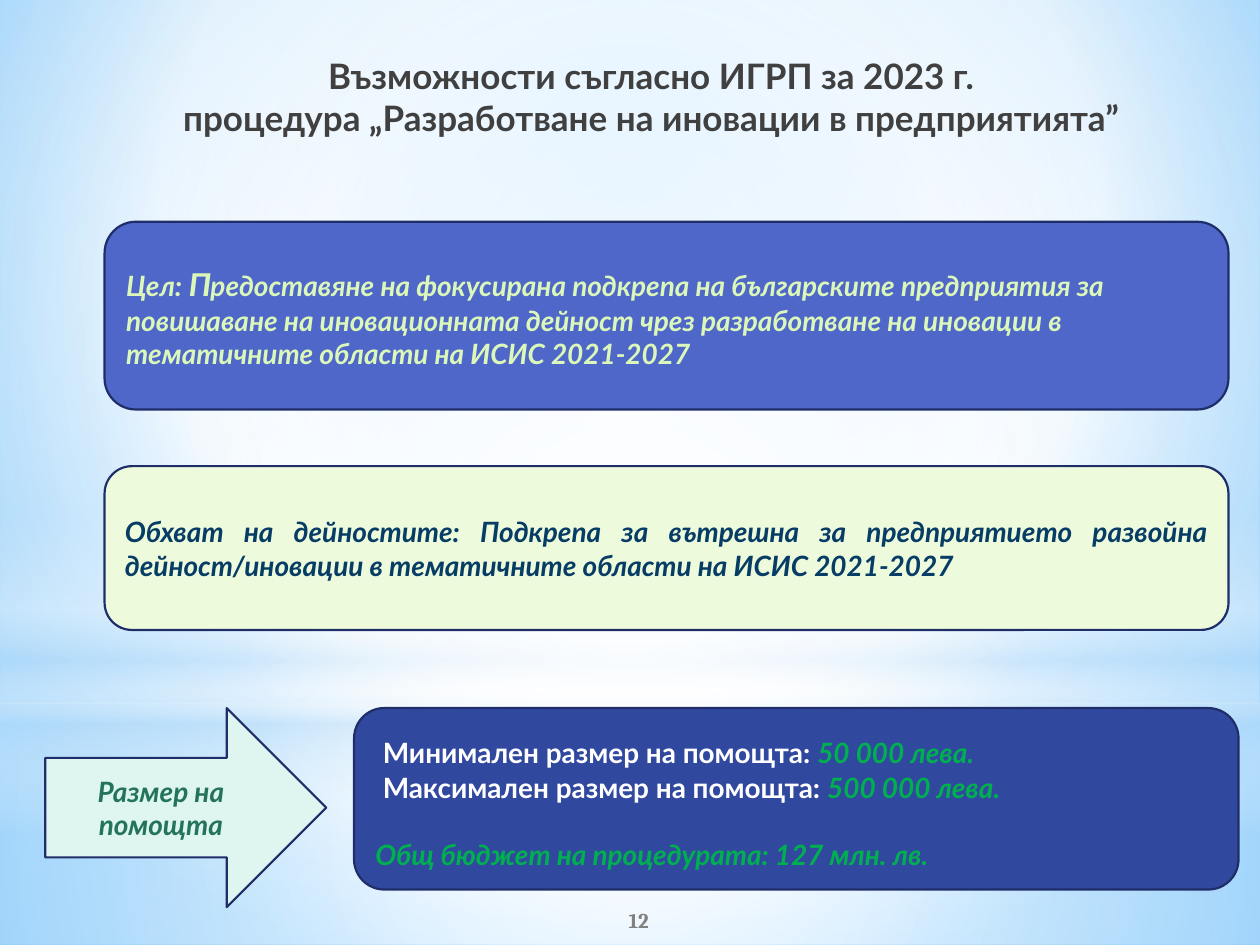
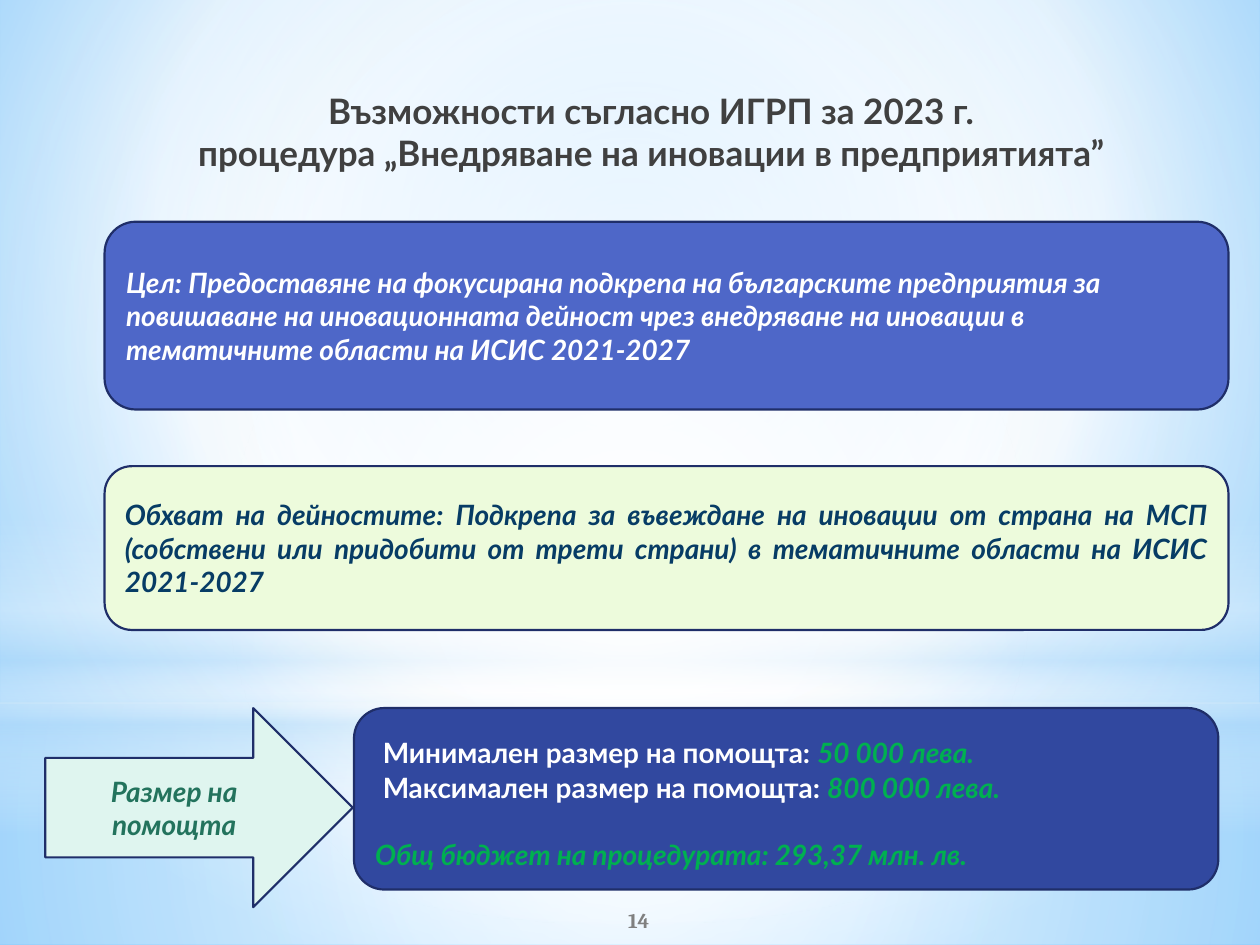
from lxml import etree
from pptx import Presentation
from pptx.dml.color import RGBColor
from pptx.enum import shapes, text
from pptx.oxml import ns
from pptx.util import Inches, Pt

# Content
SLIDES = [
    {
        "title": ["Възможности съгласно ИГРП за 2023 г.",
                  "процедура „Разработване на иновации в предприятията”"],
        "title_top": 0.38,
        "goal_color": "lime",
        "goal": [("Цел: ", 16, "Lato"), ("П", 20, "Calibri"),
                 ("редоставяне на фокусирана подкрепа на българските предприятия за "
                  "повишаване на иновационната дейност чрез разработване на иновации в "
                  "тематичните области на ИСИС 2021-2027", 16, "Lato")],
        "scope": "Обхват на дейностите: Подкрепа за вътрешна за предприятието развойна "
                 "дейност/иновации в тематичните области на ИСИС 2021-2027",
        "limits": [("Минимален размер на помощта: ", "50 000 лева."),
                   ("Максимален размер на помощта: ", "500 000 лева.")],
        "budget": "Общ бюджет на процедурата: 127 млн. лв.",
        "arrow_width": 2.23, "aid_width": 7.02, "number": "12",
    },
    {
        "title": ["Възможности съгласно ИГРП за 2023 г.",
                  "процедура „Внедряване на иновации в предприятията”"],
        "title_top": 0.66,
        "goal_color": "white",
        "goal": [("Цел: Предоставяне на фокусирана подкрепа на българските предприятия за "
                  "повишаване на иновационната дейност чрез внедряване на иновации в "
                  "тематичните области на ИСИС 2021-2027", 16, "Lato")],
        "scope": "Обхват на дейностите: Подкрепа за въвеждане на иновации от страна на МСП "
                 "(собствени или придобити от трети страни) в тематичните области на ИСИС "
                 "2021-2027",
        "limits": [("Минимален размер на помощта: ", "50 000 лева."),
                   ("Максимален размер на помощта: ", "800 000 лева.")],
        "budget": "Общ бюджет на процедурата: 293,37 млн. лв.",
        "arrow_width": 2.44, "aid_width": 6.86, "number": "14",
    },
]
ARROW_LABEL = "Размер на помощта"

# Shared style
COLORS = {
    "title": "404040", "goal": "4E67C8", "scope": "EDFBDC", "arrow": "DFF5EF",
    "aid": "31489F", "outline": "1F2E69", "lime": "DCF7BA", "white": "FFFFFF",
    "navy": "073C65", "teal": "23735D", "green": "00B050", "number": "808080",
    "sky": "B4DCFA", "sky_left": "9ED5FF", "sky_edge": "5BB9FF",
}
SHAPE = shapes.MSO_SHAPE
ALIGN = text.PP_ALIGN
CENTER = (50, 50, 50, 50)

# Gradients: stops of (position, colour, opacity), focus of a circle or None for vertical
PAGE = ([(0, "sky_left", 100), (60, "white", 100), (100, "sky_edge", 100)], (20, 10, 20, 60))
BACKDROP = [
    (SHAPE.RECTANGLE, 5.58, 1.92,
     [(0, "white", 91), (37, "white", 76), (100, "sky", 79)], CENTER),
    (SHAPE.RECTANGLE, 0, 5.58,
     [(0, "white", 89), (48, "white", 62), (100, "sky", 79)], CENTER),
    (SHAPE.RECTANGLE, 4.12, 2.5,
     [(0, "white", 0), (29, "white", 30), (45, "sky", 40), (55, "white", 26),
      (65, "sky", 60), (100, "white", 0)], None),
    (SHAPE.OVAL, 1.75, 5.58, [(0, "white", 100), (56, "white", 0)], CENTER),
]


def rgb(name):
    return RGBColor.from_string(COLORS[name])


def set_gradient(fill, element, stops, focus):
    """Give the first gradient fill under element the stops and direction."""
    fill.gradient()
    grad = element.find(".//" + ns.qn("a:gradFill"))
    for child in list(grad):
        grad.remove(child)

    def add(parent, tag, **attrs):
        return etree.SubElement(parent, ns.qn(tag), {k: str(v) for k, v in attrs.items()})

    stop_list = add(grad, "a:gsLst")
    for pos, color, opacity in stops:
        stop = add(stop_list, "a:gs", pos=pos * 1000)
        add(add(stop, "a:srgbClr", val=COLORS[color]), "a:alpha", val=opacity * 1000)
    if focus:
        path = add(grad, "a:path", path="circle")
        add(path, "a:fillToRect", **{side: v * 1000 for side, v in zip("ltrb", focus)})
    else:
        add(grad, "a:lin", ang=90 * 60000, scaled=0)


def set_font(font, size, color, name="Lato", italic=False):
    font.size, font.name, font.bold, font.italic = Pt(size), name, True, italic
    font.color.rgb = rgb(color)


def add_run(p, words, *style, **options):
    r = p.add_run()
    r.text = words
    set_font(r.font, *style, **options)


def add_box(s, kind, left, top, width, height, fill, align=ALIGN.LEFT):
    """Add an outlined shape and return its text frame."""
    sp = s.shapes.add_shape(kind, Inches(left), Inches(top), Inches(width), Inches(height))
    sp.shadow.inherit = False
    sp.fill.solid()
    sp.fill.fore_color.rgb = rgb(fill)
    sp.line.color.rgb = rgb("outline")
    sp.line.width = Pt(1.25)
    tf = sp.text_frame
    tf.word_wrap = True
    tf.vertical_anchor = text.MSO_ANCHOR.MIDDLE
    tf.paragraphs[0].alignment = align
    return tf


def set_text(tf, words, *style, **options):
    p = tf.paragraphs[0]
    p.text = words
    set_font(p.font, *style, **options)


def add_backdrop(prs, layout):
    """Draw the backdrop on a scratch slide's shape tree and move it behind the layout."""
    page = prs.slide_master
    set_gradient(page.background.fill, page.element, *PAGE)
    s = prs.slides[0]
    for i, (kind, top, height, stops, focus) in enumerate(BACKDROP):
        sp = s.shapes.add_shape(kind, 0, Inches(top), prs.slide_width, Inches(height))
        sp.shadow.inherit = False
        sp.line.fill.background()
        set_gradient(sp.fill, sp.element, stops, focus)
        layout.shapes.element.insert(2 + i, sp.element)


def add_title(s, lines, top):
    title = s.shapes.title
    title.left, title.top = Inches(0.41), Inches(top)
    title.width, title.height = Inches(9.52), Inches(0.77)
    tf = title.text_frame
    tf.text = "\n".join(lines)
    tf.word_wrap = True
    tf.auto_size = text.MSO_AUTO_SIZE.NONE
    tf.vertical_anchor = text.MSO_ANCHOR.TOP
    for p in tf.paragraphs:
        p.alignment = ALIGN.CENTER
        set_font(p.font, 20, "title")


def add_aid(s, limits, budget, width):
    tf = add_box(s, SHAPE.ROUNDED_RECTANGLE, 2.81, 5.62, width, 1.44, "aid")
    tf.margin_top = Inches(0.12)
    for i, (label, amount) in enumerate(limits):
        p = tf.add_paragraph() if i else tf.paragraphs[0]
        p.alignment = ALIGN.LEFT
        p.space_before = Pt(i)
        p._p.get_or_add_pPr().set("marL", str(Inches(0.06)))
        add_run(p, label, 16, "white")
        add_run(p, amount, 16, "green", italic=True)
    p = tf.add_paragraph()
    p.text = budget
    p.alignment = ALIGN.LEFT
    p.space_before = Pt(19)
    set_font(p.font, 16, "green", italic=True)


def add_number(s, number):
    tf = s.shapes.add_textbox(Inches(4.07), Inches(7.1), Inches(2), Inches(0.4)).text_frame
    tf.word_wrap = True
    tf.vertical_anchor = text.MSO_ANCHOR.MIDDLE
    tf.paragraphs[0].alignment = ALIGN.CENTER
    set_text(tf, number, 12, "number", name="Cambria")


def add_procedure(prs, layout, item):
    s = prs.slides.add_slide(layout)
    add_title(s, item["title"], item["title_top"])

    # Goal and scope
    tf = add_box(s, SHAPE.ROUNDED_RECTANGLE, 0.83, 1.76, 8.92, 1.49, "goal")
    for words, size, font in item["goal"]:
        add_run(tf.paragraphs[0], words, size, item["goal_color"], name=font, italic=True)
    tf = add_box(s, SHAPE.ROUNDED_RECTANGLE, 0.83, 3.7, 8.92, 1.3, "scope", ALIGN.JUSTIFY)
    set_text(tf, item["scope"], 16, "navy", italic=True)

    # Size of the aid
    tf = add_box(s, SHAPE.RIGHT_ARROW, 0.36, 5.62, item["arrow_width"], 1.58, "arrow",
                 ALIGN.CENTER)
    set_text(tf, ARROW_LABEL, 16, "teal", italic=True)
    add_aid(s, item["limits"], item["budget"], item["aid_width"])
    add_number(s, item["number"])


def main():
    prs = Presentation()
    prs.slide_width, prs.slide_height = Inches(10), Inches(7.5)
    layout = prs.slide_layouts.get_by_name("Title Only")
    for item in SLIDES:
        add_procedure(prs, layout, item)
    add_backdrop(prs, layout)
    prs.save("out.pptx")


if __name__ == "__main__":
    main()
